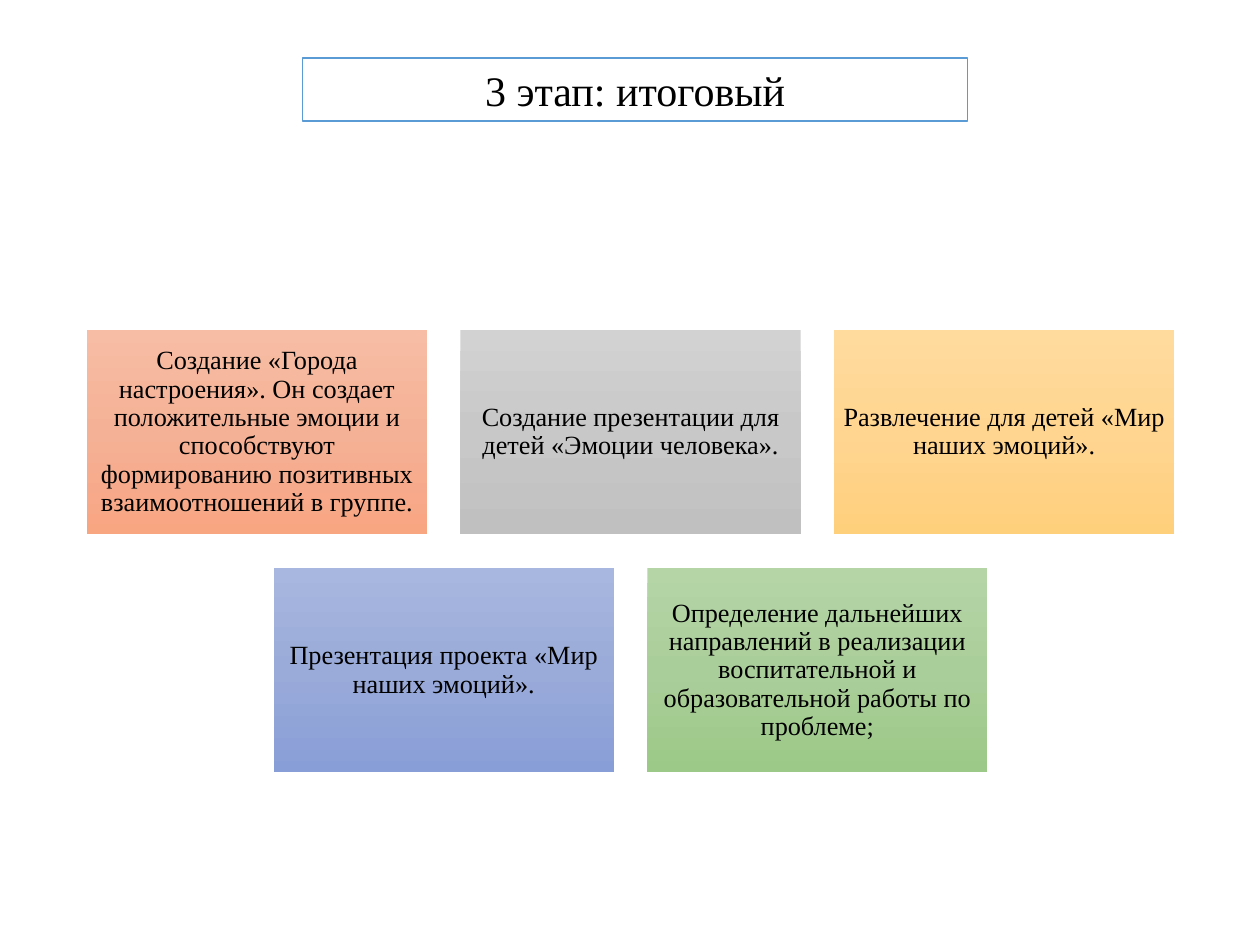
from copy import deepcopy

from pptx import Presentation
from pptx.dml.color import RGBColor
from pptx.enum.shapes import MSO_SHAPE
from pptx.enum.text import MSO_ANCHOR as Anchor, PP_ALIGN as Align
from pptx.oxml.ns import qn
from pptx.util import Inches, Pt

BLACK = RGBColor(0x00, 0x00, 0x00)
WHITE = RGBColor(0xFF, 0xFF, 0xFF)
BLUE = RGBColor(0x5B, 0x9B, 0xD5)

# Top, middle and bottom colour of each card
ORANGE = [RGBColor.from_string(c) for c in ("F7BDA5", "F5B196", "F8A582")]
GREY = [RGBColor.from_string(c) for c in ("D2D2D2", "C8C8C8", "C0C0C0")]
YELLOW = [RGBColor.from_string(c) for c in ("FFDB9E", "FFD590", "FFD07C")]
INDIGO = [RGBColor.from_string(c) for c in ("A8B7DF", "9AABD9", "889ED7")]
GREEN = [RGBColor.from_string(c) for c in ("B5D5A7", "AACE9A", "9CC987")]

FONT = {"name": "Times New Roman"}
CARD_WIDTH, CARD_HEIGHT = Inches(2.7), Inches(1.62)
CARD_INSET = Inches(0.06)

RESULT_ROWS = [
    [
        ("Создание «Города настроения». Он создает положительные эмоции и "
         "способствуют формированию позитивных взаимоотношений в группе.", ORANGE),
        ("Создание презентации для детей «Эмоции человека».", GREY),
        ("Развлечение для детей «Мир наших эмоций».", YELLOW),
    ],
    [
        ("Презентация проекта «Мир наших эмоций».", INDIGO),
        ("Определение дальнейших направлений в реализации воспитательной и "
         "образовательной работы по проблеме;", GREEN),
    ],
]


def apply_format(target, values):
    for name, value in values.items():
        setattr(target, name, value)


def add_box(slide, box, text, size, line_spacing=1.0):
    """Add a rectangle with centred black text."""
    shape = slide.shapes.add_shape(MSO_SHAPE.RECTANGLE, *box)
    shape.shadow.inherit = False
    apply_format(shape.text_frame,
                 {"word_wrap": True, "vertical_anchor": Anchor.MIDDLE})
    paragraph = shape.text_frame.paragraphs[0]
    apply_format(paragraph, {"alignment": Align.CENTER, "line_spacing": line_spacing})
    run = paragraph.add_run()
    run.text = text
    apply_format(run.font, {**FONT, "size": Pt(size)})
    run.font.color.rgb = BLACK
    return shape


def fill_gradient(shape, colours):
    """Fill from top to bottom with three evenly spaced colours."""
    fill = shape.fill
    fill.gradient()
    fill.gradient_angle = 270
    stop_list = next(shape.element.iter(qn("a:gsLst")))
    stop_list.insert(1, deepcopy(stop_list[0]))
    for stop, colour, position in zip(fill.gradient_stops, colours, (0, 0.5, 1)):
        stop.color.rgb = colour
        stop.position = position


def add_title(slide, box):
    title = add_box(slide, box, "3 этап: итоговый", 24)
    title.fill.solid()
    title.fill.fore_color.rgb = WHITE
    title.line.color.rgb = BLUE
    title.line.width = Pt(1)


def add_results(slide, left, top, width, height):
    """Place the rows of cards, each row centred in the box."""
    columns = max(len(row) for row in RESULT_ROWS)
    step_x = (width - CARD_WIDTH) // (columns - 1)
    step_y = (height - CARD_HEIGHT) // (len(RESULT_ROWS) - 1)
    for row_index, row in enumerate(RESULT_ROWS):
        row_left = left + (columns - len(row)) * step_x // 2
        for column, (text, colours) in enumerate(row):
            box = (row_left + column * step_x, top + row_index * step_y,
                   CARD_WIDTH, CARD_HEIGHT)
            card = add_box(slide, box, text, 15, line_spacing=0.9)
            fill_gradient(card, colours)
            card.line.fill.background()
            apply_format(card.text_frame, {
                f"margin_{side}": CARD_INSET
                for side in ("left", "top", "right", "bottom")})


def main():
    presentation = Presentation()
    presentation.slide_width, presentation.slide_height = Inches(10), Inches(7.5)
    slide = presentation.slides.add_slide(presentation.slide_layouts[6])

    # Cards with the results of the stage
    add_results(slide, Inches(0.69), Inches(2.62), Inches(8.63), Inches(3.51))
    # Stage title
    add_title(slide, (Inches(2.4), Inches(0.46), Inches(5.28), Inches(0.5)))

    presentation.save("out.pptx")


if __name__ == "__main__":
    main()
